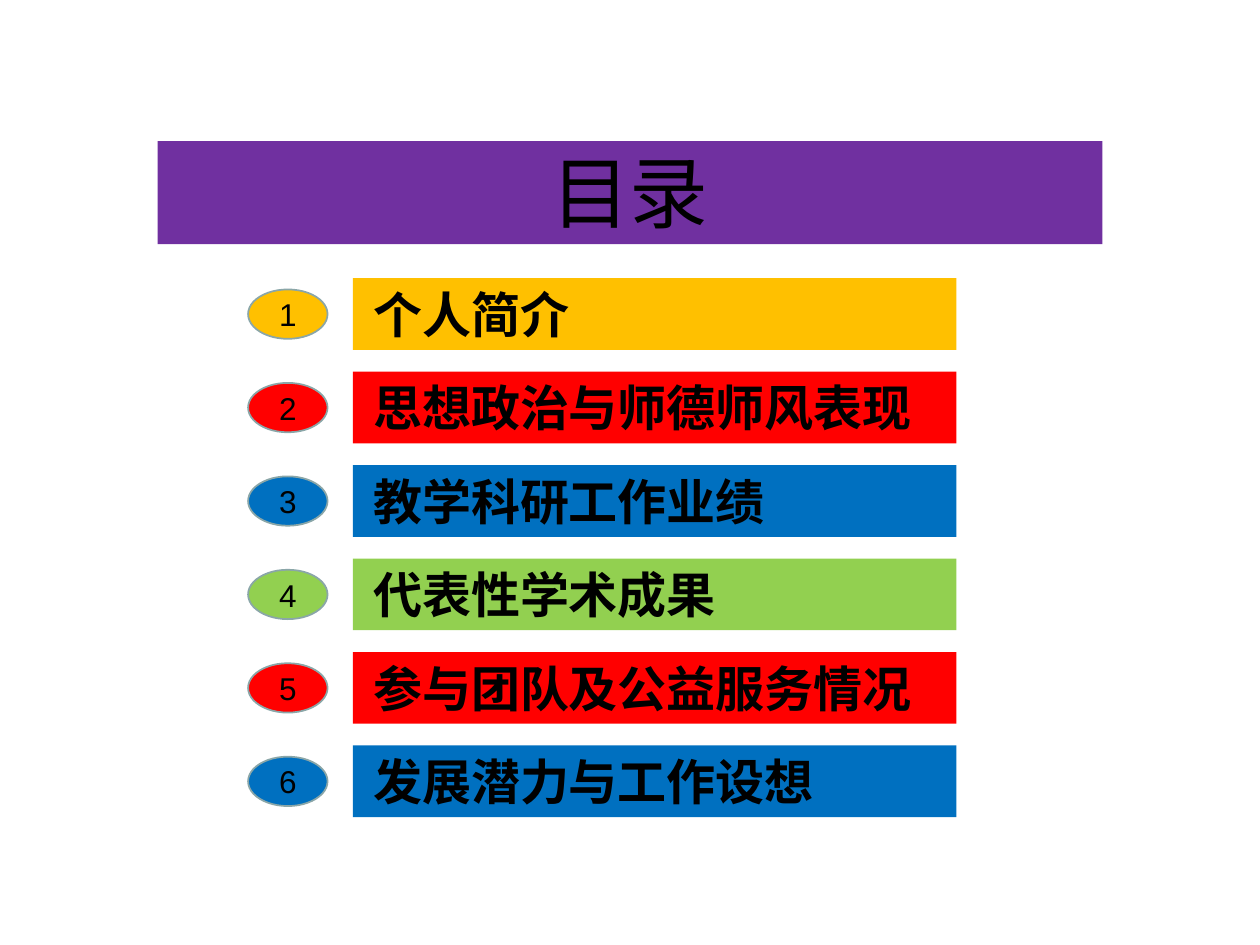
from dataclasses import dataclass

from lxml.etree import SubElement
from pptx import Presentation
from pptx.dml.color import RGBColor
from pptx.enum.shapes import MSO_SHAPE as Shape
from pptx.enum.text import MSO_ANCHOR as Anchor, PP_ALIGN as Align
from pptx.oxml.ns import qn
from pptx.util import Pt


@dataclass(frozen=True)
class Theme:
    purple: str = "7030A0"
    amber: str = "FFC000"
    red: str = "FF0000"
    blue: str = "0070C0"
    green: str = "92D050"
    outline: str = "8AA6A8"
    ink: str = "000000"
    latin: str = "Arial"
    chinese: str = "Noto Sans CJK SC"
    title_size: int = 45
    entry_size: int = 28
    number_size: int = 18


theme = Theme()


def paint(shape, color):
    shape.fill.solid()
    shape.fill.fore_color.rgb = RGBColor.from_string(color)


def write(shape, text, size, font, align, anchor, bold=False):
    frame = shape.text_frame
    frame.word_wrap = True
    frame.vertical_anchor = anchor
    para = frame.paragraphs[0]
    para.text = text
    para.alignment = align
    para.font.name = font
    para.font.size = Pt(size)
    para.font.bold = bold
    para.font.color.rgb = RGBColor.from_string(theme.ink)
    # East Asian text takes its own typeface
    east_asian = SubElement(para._p.pPr.find(qn("a:defRPr")), qn("a:ea"))
    east_asian.set("typeface", theme.chinese)


deck = Presentation()
deck.slide_width, deck.slide_height = Pt(720), Pt(540)
page = deck.slides.add_slide(deck.slide_layouts[5])

title = page.shapes.title
title.left, title.top, title.width, title.height = Pt(90), Pt(80.6), Pt(540), Pt(59)
paint(title, theme.purple)
write(title, "目录", theme.title_size, theme.latin, Align.CENTER, Anchor.BOTTOM)

entries = [
    ("个人简介", theme.amber),
    ("思想政治与师德师风表现", theme.red),
    ("教学科研工作业绩", theme.blue),
    ("代表性学术成果", theme.green),
    ("参与团队及公益服务情况", theme.red),
    ("发展潜力与工作设想", theme.blue),
]
first_top, row_pitch = 159, 53.4
bar_height, badge_height = 41, 28.2

for number, (entry, color) in enumerate(entries, start=1):
    top = first_top + (number - 1) * row_pitch

    badge_top = top + (bar_height - badge_height) / 2
    badge = page.shapes.add_shape(
        Shape.FLOWCHART_CONNECTOR, Pt(141.8), Pt(badge_top), Pt(45.4), Pt(badge_height))
    badge.shadow.inherit = False
    paint(badge, color)
    badge.line.color.rgb = RGBColor.from_string(theme.outline)
    badge.line.width = Pt(1)
    write(badge, str(number), theme.number_size, theme.latin, Align.CENTER, Anchor.MIDDLE)

    bar = page.shapes.add_shape(
        Shape.RECTANGLE, Pt(201.6), Pt(top), Pt(344.9), Pt(bar_height))
    bar.shadow.inherit = False
    paint(bar, color)
    bar.line.fill.background()
    bar.text_frame.margin_left = Pt(11.7)
    write(bar, entry, theme.entry_size, theme.chinese, Align.LEFT, Anchor.TOP, bold=True)

deck.save("out.pptx")
